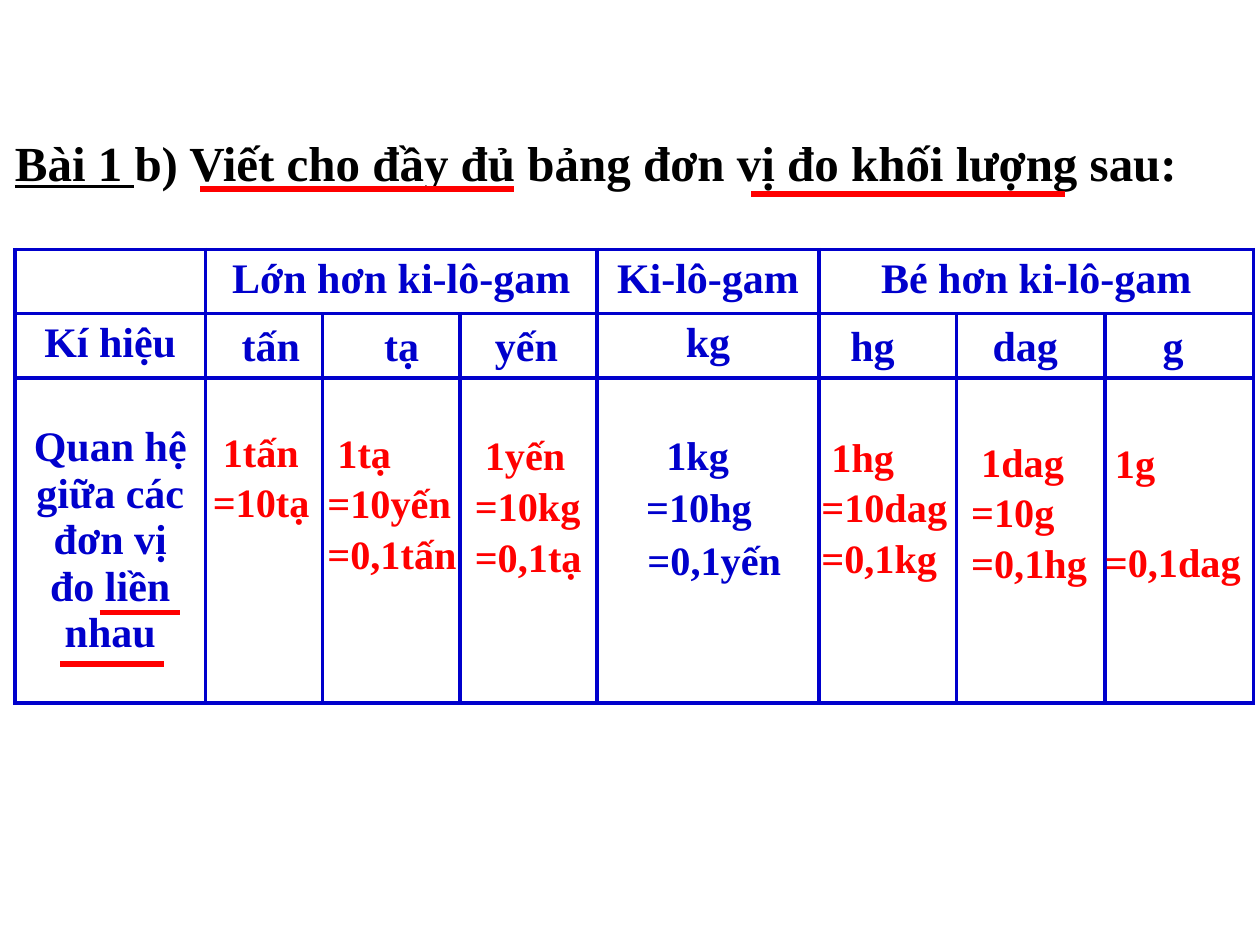
from lxml import etree
from pptx import Presentation
from pptx.dml.color import RGBColor
from pptx.enum.shapes import MSO_CONNECTOR
from pptx.enum.text import MSO_ANCHOR, MSO_AUTO_SIZE, PP_ALIGN
from pptx.oxml.ns import qn
from pptx.util import Inches, Pt

STRAIGHT = MSO_CONNECTOR.STRAIGHT
MIDDLE, TOP = MSO_ANCHOR.MIDDLE, MSO_ANCHOR.TOP
CENTER = PP_ALIGN.CENTER
FIT_SHAPE = MSO_AUTO_SIZE.SHAPE_TO_FIT_TEXT

BLACK = RGBColor(0, 0, 0)
BLUE = RGBColor(0, 0, 0xCC)
RED = RGBColor(0xFF, 0, 0)
FONT_NAME = "Times New Roman"

COLUMN_WIDTHS = (1.51, 0.93, 1.09, 1.09, 1.76, 1.09, 1.18, 1.18)
ROW_HEIGHTS = (0.51, 0.51, 2.58)
CELL_TEXTS = {
    (0, 1): "Lớn hơn ki-lô-gam",
    (0, 4): "Ki-lô-gam",
    (0, 5): "Bé hơn ki-lô-gam",
    (1, 0): "Kí hiệu",
    (1, 4): "kg",
    (2, 0): "Quan hệ giữa các đơn vị đo liền nhau",
}
# left, width, text
UNITS = (
    (1.82, 0.67, "tấn"),
    (2.95, 0.48, "tạ"),
    (3.83, 0.73, "yến"),
    (6.65, 0.56, "hg"),
    (7.78, 0.73, "dag"),
    (9.13, 0.37, "g"),
)
# left, top, width, height, colour, lines, gap after each line in points
RELATIONS = (
    (1.59, 3.32, 1.42, 0.88, RED, (" 1tấn", "=10tạ"), 0),
    (2.5, 3.33, 1.5, 1.26, RED, (" 1tạ", "=10yến", "=0,1tấn"), 0),
    (3.67, 3.35, 1.4, 1.26, RED, (" 1yến", "=10kg", "=0,1tạ"), 0),
    (6.42, 3.36, 1.21, 1.26, RED, (" 1hg", "=10dag", "=0,1kg"), 0),
    (7.61, 3.4, 1.23, 1.26, RED, (" 1dag", "=10g", "=0,1hg"), 0),
    (8.67, 3.41, 1.29, 1.26, RED, (" 1g", "=0,1dag"), 27.5),
    (5.11, 3.35, 1.48, 0.49, BLUE, (" 1kg",), 0),
    (5.03, 3.76, 1.48, 0.49, BLUE, ("=10hg",), 0),
    (5.04, 4.18, 1.48, 0.49, BLUE, ("=0,1yến",), 0),
)
# start, end, height
UNDERLINES = (
    (1.59, 4.08, 1.5),
    (5.96, 8.45, 1.54),
    (0.79, 1.43, 4.86),
    (0.48, 1.3, 5.27),
)


def add_run(paragraph, text, size, color, underline=False):
    run = paragraph.add_run()
    run.text = text
    run.font.color.rgb = color
    values = {"name": FONT_NAME, "size": Pt(size), "bold": True, "underline": underline}
    for name, value in values.items():
        setattr(run.font, name, value)


def add_text_box(slide, left, top, width, height, wrap=False):
    box = slide.shapes.add_textbox(*map(Inches, (left, top, width, height)))
    box.text_frame.word_wrap = wrap
    box.text_frame.auto_size = FIT_SHAPE
    return box.text_frame


def add_title(slide):
    paragraph = add_text_box(slide, 0.02, 1, 9.51, 0.57).paragraphs[0]
    add_run(paragraph, "Bài 1 ", 28, BLACK, underline=True)
    add_run(paragraph, "b) Viết cho đầy đủ bảng đơn vị đo khối lượng sau:", 28, BLACK)


def add_relation(slide, left, top, width, height, color, lines, gap):
    frame = add_text_box(slide, left, top, width, height, wrap=True)
    for index, line in enumerate(lines):
        paragraph = frame.add_paragraph() if index else frame.paragraphs[0]
        paragraph.space_after = Pt(gap)
        paragraph.line_spacing = 1.05
        add_run(paragraph, line, 23, color)


def set_borders(cell):
    properties = cell._tc.get_or_add_tcPr()
    for position, side in enumerate(("a:lnL", "a:lnR", "a:lnT", "a:lnB")):
        line = etree.Element(qn(side), w=str(Pt(2.25)))
        fill = etree.SubElement(line, qn("a:solidFill"))
        etree.SubElement(fill, qn("a:srgbClr"), val=str(BLUE))
        properties.insert(position, line)


def add_unit_table(slide):
    frame = slide.shapes.add_table(
        len(ROW_HEIGHTS), len(COLUMN_WIDTHS),
        Inches(0.12), Inches(1.98), Inches(sum(COLUMN_WIDTHS)), Inches(sum(ROW_HEIGHTS)))
    table = frame.table
    table.first_row = table.horz_banding = False
    for column, width in zip(table.columns, COLUMN_WIDTHS):
        column.width = Inches(width)
    for row, height in zip(table.rows, ROW_HEIGHTS):
        row.height = Inches(height)
    for cell in table.iter_cells():
        cell.fill.background()
        set_borders(cell)
    for first in (1, 5):
        table.cell(0, first).merge(table.cell(0, first + 2))
    for (row, column), text in CELL_TEXTS.items():
        cell = table.cell(row, column)
        cell.vertical_anchor = MIDDLE if row == 2 else TOP
        paragraph = cell.text_frame.paragraphs[0]
        paragraph.alignment = CENTER
        paragraph.space_before = Pt(4.8)
        add_run(paragraph, text, 24, BLUE)


def add_underline(slide, start, end, height):
    line = slide.shapes.add_connector(
        STRAIGHT, Inches(start), Inches(height), Inches(end), Inches(height))
    line.line.color.rgb = RED
    line.line.width = Pt(3)
    etree.SubElement(line._element.spPr, qn("a:effectLst"))


def main():
    presentation = Presentation()
    presentation.slide_width, presentation.slide_height = Inches(10), Inches(7.5)
    slide = presentation.slides.add_slide(presentation.slide_layouts[6])
    add_title(slide)
    add_unit_table(slide)
    for relation in RELATIONS:
        add_relation(slide, *relation)
    for left, width, text in UNITS:
        frame = add_text_box(slide, left, 2.49, width, 0.51)
        add_run(frame.paragraphs[0], text, 24, BLUE)
    for underline in UNDERLINES:
        add_underline(slide, *underline)
    presentation.save("out.pptx")


if __name__ == "__main__":
    main()
